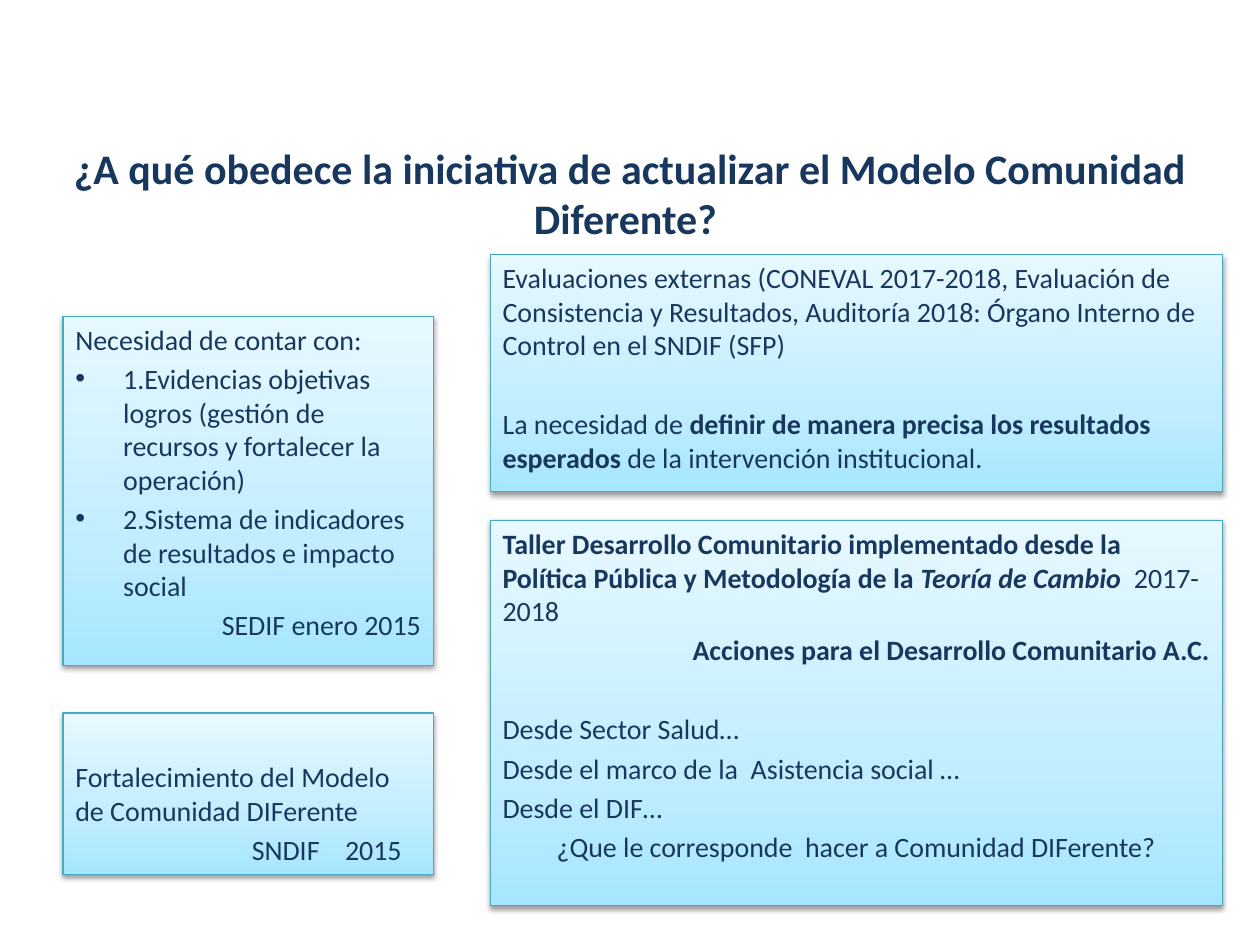
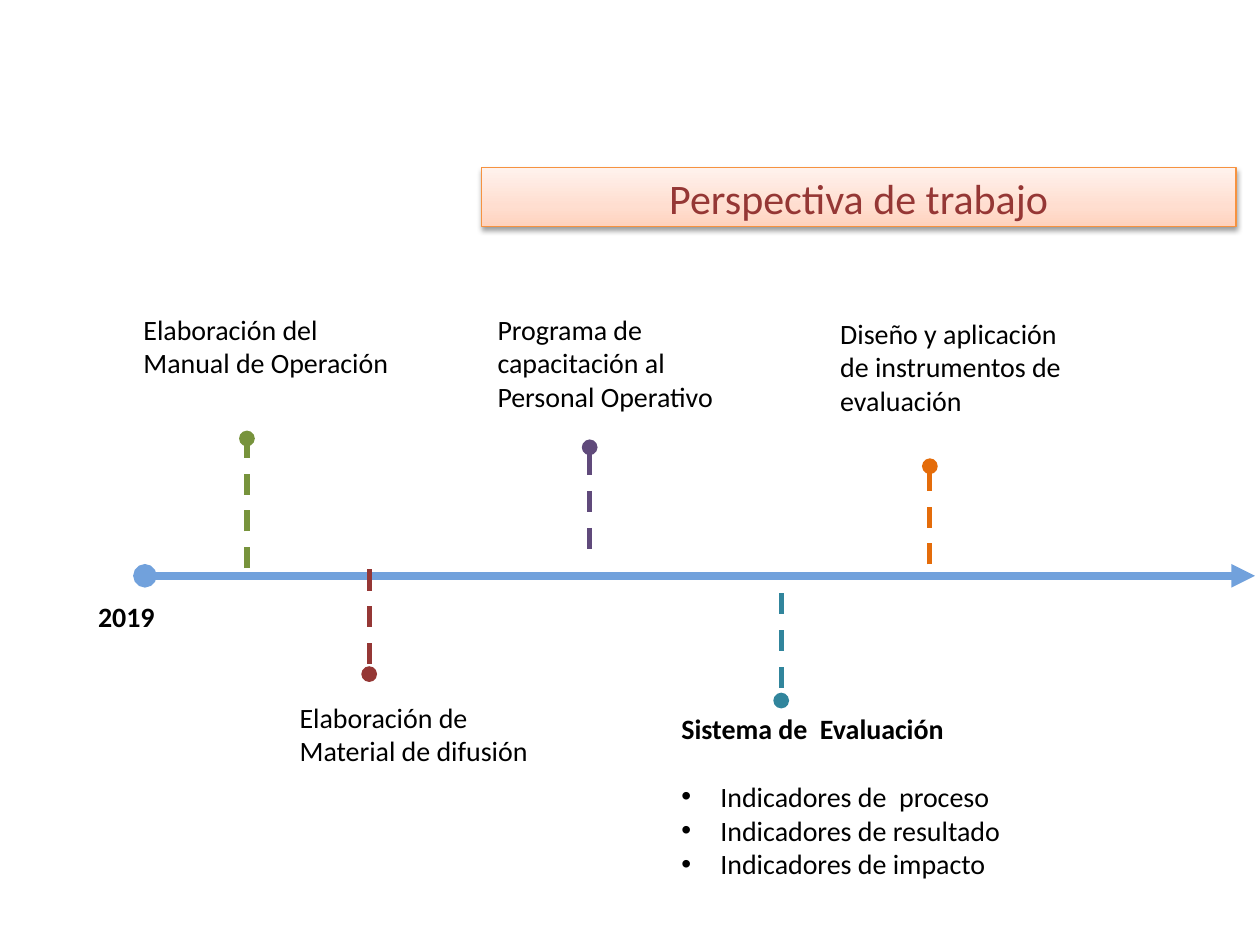
from dataclasses import dataclass

from lxml.etree import SubElement
from pptx import Presentation
from pptx.dml.color import RGBColor
from pptx.enum.dml import MSO_LINE
from pptx.enum.shapes import MSO_CONNECTOR, MSO_SHAPE
from pptx.enum.text import MSO_ANCHOR, MSO_AUTO_SIZE, PP_ALIGN
from pptx.oxml.ns import qn
from pptx.util import Inches, Pt

FONT = "Calibri"
BODY_SIZE, TITLE_SIZE = 16, 24
SLIDE_WIDTH, SLIDE_HEIGHT = Inches(10), Inches(7.5)
COLUMNS, ROWS = 100, 75
ITEM_SPACE, PANEL_BREAK, LABEL_BREAK = 3.2, 26, 19.5
TITLE_ONLY_LAYOUT = 5

BLACK = RGBColor(0x00, 0x00, 0x00)
NAVY = RGBColor(0x17, 0x37, 0x5E)
RED = RGBColor(0x95, 0x37, 0x35)
GREEN = RGBColor(0x77, 0x93, 0x3C)
PURPLE = RGBColor(0x60, 0x4A, 0x7B)
TEAL = RGBColor(0x31, 0x85, 0x9C)
ORANGE = RGBColor(0xE4, 0x6C, 0x0A)
AXIS_BLUE = RGBColor(0x71, 0xA1, 0xDC)
AQUA_BORDER = RGBColor(0x46, 0xAA, 0xC5)
AQUA_STOPS = (RGBColor(0xA7, 0xE6, 0xFF), RGBColor(0xC1, 0xED, 0xFF), RGBColor(0xE7, 0xF8, 0xFF))
PEACH_BORDER = RGBColor(0xF6, 0x92, 0x40)
PEACH_STOPS = (RGBColor(0xFF, 0xD2, 0xBD), RGBColor(0xFF, 0xDE, 0xD0), RGBColor(0xFF, 0xF2, 0xED))
STOP_POSITIONS = (0, 35000, 100000)


@dataclass(frozen=True)
class Area:
    """A rectangle in grid columns and rows."""
    column: float
    row: float
    columns: float
    rows: float


@dataclass(frozen=True)
class Span:
    """A stretch of text with its own emphasis."""
    text: str
    bold: bool = False
    italic: bool = False


@dataclass(frozen=True)
class Line:
    """One paragraph with its layout."""
    spans: tuple[Span, ...]
    align: PP_ALIGN = PP_ALIGN.LEFT
    space: float = 0
    bullet_indent: float = 0
    tabs: tuple[float, ...] = ()


@dataclass(frozen=True)
class Panel:
    """A shaded box of text."""
    area: Area
    lines: tuple[Line, ...]
    top_inset: float = 0.05


@dataclass(frozen=True)
class Label:
    """A plain text beside the timeline."""
    area: Area
    lines: tuple[Line, ...]


@dataclass(frozen=True)
class Pin:
    """A dashed marker that runs from one row to another."""
    colour: RGBColor
    column: float
    start_row: float
    end_row: float
    head: str = "none"
    tail: str = "oval"


def plain(text: str, bold: bool = False, **layout) -> Line:
    """Return a paragraph with a single span."""
    return Line((Span(text, bold),), **layout)


def item(text: str, **layout) -> Line:
    """Return a panel paragraph set apart from the one above."""
    return plain(text, **{"space": ITEM_SPACE, **layout})


PANELS = (
    Panel(Area(5, 25.1, 29.4, 27.7), (
        plain("Necesidad de contar con:"),
        item("1.Evidencias objetivas logros (gestión de recursos y fortalecer la operación)", bullet_indent=0.38),
        item("2.Sistema de indicadores de resultados e impacto social", bullet_indent=0.38),
        item("SEDIF enero 2015", align=PP_ALIGN.RIGHT),
    )),
    Panel(Area(5, 56.6, 29.4, 12.8), (
        plain("Fortalecimiento del Modelo de Comunidad DIFerente"),
        item("\tSNDIF\t2015", tabs=(1.4, 2.14)),
    ), top_inset=0.37),
    Panel(Area(38.9, 20.2, 58.1, 18.8), (
        plain("Evaluaciones externas (CONEVAL 2017-2018, Evaluación de Consistencia y Resultados, "
              "Auditoría 2018: Órgano Interno de Control en el SNDIF (SFP)"),
        Line((Span("La necesidad de "),
              Span("definir de manera precisa los resultados esperados ", bold=True),
              Span("de la intervención institucional.")), space=PANEL_BREAK),
    )),
    Panel(Area(38.9, 41.3, 58.1, 30.6), (
        Line((Span("Taller Desarrollo Comunitario implementado desde la Política Pública "
                   "y Metodología de la ", bold=True),
              Span("Teoría de Cambio  ", bold=True, italic=True),
              Span("2017-2018"))),
        item("Acciones para el Desarrollo Comunitario A.C.", bold=True, align=PP_ALIGN.RIGHT),
        item("Desde Sector Salud…", space=PANEL_BREAK),
        item("Desde el marco de la  Asistencia social …"),
        item("Desde el DIF…"),
        item("¿Que le corresponde  hacer a Comunidad DIFerente?", align=PP_ALIGN.CENTER),
    )),
)

LABELS = (
    Label(Area(6.8, 47.1, 7.9, 3.7), (plain("2019", bold=True),)),
    Label(Area(10.4, 24.3, 21.9, 6.4), (plain("Elaboración del Manual de Operación"),)),
    Label(Area(22.8, 55.1, 21.2, 6.4), (plain("Elaboración de Material de difusión"),)),
    Label(Area(38.5, 24.3, 20.1, 9.1), (plain("Programa de capacitación al Personal Operativo"),)),
    Label(Area(65.7, 24.6, 21.1, 9.1), (plain("Diseño y aplicación de instrumentos de evaluación"),)),
    Label(Area(53.1, 56, 33.7, 14.5), (
        plain("Sistema de  Evaluación", bold=True),
        plain("Indicadores de  proceso", space=LABEL_BREAK, bullet_indent=0.31),
        plain("Indicadores de resultado", bullet_indent=0.31),
        plain("Indicadores de impacto", bullet_indent=0.31),
    )),
)

PINS = (
    Pin(GREEN, 19.6, 45.1, 34.8),
    Pin(PURPLE, 46.8, 35.5, 44.6, head="oval", tail="none"),
    Pin(TEAL, 62, 47.1, 55.6),
    Pin(RED, 29.3, 45.2, 53.5),
    Pin(ORANGE, 73.8, 44.8, 37),
)


def across(columns: float) -> int:
    """Convert grid columns to a length."""
    return round(SLIDE_WIDTH * columns / COLUMNS)


def down(rows: float) -> int:
    """Convert grid rows to a length."""
    return round(SLIDE_HEIGHT * rows / ROWS)


def bounds(area: Area) -> tuple[int, int, int, int]:
    """Return left, top, width and height of an area."""
    return across(area.column), down(area.row), across(area.columns), down(area.rows)


def add_marks(paragraph, line: Line) -> None:
    """Give a paragraph its bullet and tab stops."""
    properties = paragraph._p.get_or_add_pPr()
    if line.bullet_indent:
        indent = Inches(line.bullet_indent)
        properties.set("marL", str(indent))
        properties.set("indent", str(-indent))
        SubElement(properties, qn("a:buFont"), typeface="Arial")
        SubElement(properties, qn("a:buChar"), char="•")
    if line.tabs:
        tab_list = SubElement(properties, qn("a:tabLst"))
        for position in line.tabs:
            SubElement(tab_list, qn("a:tab"), pos=str(Inches(position)), algn="l")


def style_font(font, size: float, colour: RGBColor, bold: bool = False, italic: bool = False) -> None:
    """Set every property of a font."""
    font.name, font.size, font.bold, font.italic = FONT, Pt(size), bold, italic
    font.color.rgb = colour


def write_lines(text_frame, lines: tuple[Line, ...], colour: RGBColor) -> None:
    """Fill a text frame with formatted paragraphs."""
    text_frame.word_wrap = True
    text_frame.vertical_anchor = MSO_ANCHOR.TOP
    for index, line in enumerate(lines):
        paragraph = text_frame.add_paragraph() if index else text_frame.paragraphs[0]
        add_marks(paragraph, line)
        paragraph.alignment = line.align
        paragraph.space_before = Pt(line.space)
        for span in line.spans:
            run = paragraph.add_run()
            run.text = span.text
            style_font(run.font, BODY_SIZE, colour, span.bold, span.italic)


def shade(shape, stops: tuple[RGBColor, ...], border: RGBColor) -> None:
    """Give a shape a rising gradient, a thin border and a soft shadow."""
    shape.fill.gradient()
    shape.fill.gradient_angle = 90
    properties = shape._element.spPr
    stop_list = properties.find(qn("a:gradFill")).find(qn("a:gsLst"))
    for old_stop in list(stop_list):
        stop_list.remove(old_stop)
    for position, colour in zip(STOP_POSITIONS, stops):
        stop = SubElement(stop_list, qn("a:gs"), pos=str(position))
        SubElement(stop, qn("a:srgbClr"), val=str(colour))
    shape.line.color.rgb = border
    shape.line.width = Pt(0.75)
    shape.shadow.inherit = False
    shadow = SubElement(properties.find(qn("a:effectLst")), qn("a:outerShdw"), blurRad=str(Pt(3.1)),
                        dist=str(Pt(1.6)), dir="5400000", rotWithShape="0")
    shadow_colour = SubElement(shadow, qn("a:srgbClr"), val=str(BLACK))
    SubElement(shadow_colour, qn("a:alpha"), val="38000")


def add_titled_slide(presentation, text: str, area: Area, colour: RGBColor, bold: bool = False):
    """Add a slide and place its title."""
    slide = presentation.slides.add_slide(presentation.slide_layouts[TITLE_ONLY_LAYOUT])
    title = slide.shapes.title
    title.left, title.top, title.width, title.height = bounds(area)
    text_frame = title.text_frame
    text_frame.text = text
    text_frame.word_wrap = True
    text_frame.vertical_anchor = MSO_ANCHOR.MIDDLE
    text_frame.margin_left = text_frame.margin_right = Inches(0.07)
    text_frame.margin_top = text_frame.margin_bottom = Inches(0.04)
    paragraph = text_frame.paragraphs[0]
    paragraph.alignment = PP_ALIGN.CENTER
    style_font(paragraph.runs[0].font, TITLE_SIZE, colour, bold)
    return slide


def add_panel(slide, panel: Panel) -> None:
    """Draw a shaded box with its text."""
    shape = slide.shapes.add_shape(MSO_SHAPE.RECTANGLE, *bounds(panel.area))
    shade(shape, AQUA_STOPS, AQUA_BORDER)
    shape.text_frame.margin_top = Inches(panel.top_inset)
    write_lines(shape.text_frame, panel.lines, NAVY)


def add_label(slide, label: Label) -> None:
    """Draw a plain text box."""
    text_frame = slide.shapes.add_textbox(*bounds(label.area)).text_frame
    write_lines(text_frame, label.lines, BLACK)
    text_frame.auto_size = MSO_AUTO_SIZE.SHAPE_TO_FIT_TEXT


def add_line(slide, start: tuple[float, float], end: tuple[float, float], colour: RGBColor,
             width: float, head: str, tail: str, dashed: bool = False) -> None:
    """Draw a straight line between two grid points."""
    connector = slide.shapes.add_connector(
        MSO_CONNECTOR.STRAIGHT, across(start[0]), down(start[1]), across(end[0]), down(end[1]))
    connector.line.color.rgb = colour
    connector.line.width = Pt(width)
    if dashed:
        connector.line.dash_style = MSO_LINE.DASH
    properties = connector._element.spPr
    outline = properties.find(qn("a:ln"))
    SubElement(outline, qn("a:headEnd"), type=head)
    SubElement(outline, qn("a:tailEnd"), type=tail)
    SubElement(properties, qn("a:effectLst"))


def build_reasons(presentation) -> None:
    """Build the slide on why the model is updated."""
    slide = add_titled_slide(
        presentation, "¿A qué obedece la iniciativa de actualizar el Modelo Comunidad Diferente? ",
        Area(5, 10.3, 90, 10), NAVY, bold=True)
    for panel in PANELS:
        add_panel(slide, panel)


def build_timeline(presentation) -> None:
    """Build the slide with the work timeline."""
    slide = add_titled_slide(presentation, "Perspectiva de trabajo", Area(38.2, 13.3, 59.9, 4.7), RED)
    shade(slide.shapes.title, PEACH_STOPS, PEACH_BORDER)
    add_line(slide, (11.5, 45.7), (99.6, 45.7), AXIS_BLUE, 4.5, "oval", "triangle")
    for pin in PINS:
        add_line(slide, (pin.column, pin.start_row), (pin.column, pin.end_row),
                 pin.colour, 3, pin.head, pin.tail, dashed=True)
    for label in LABELS:
        add_label(slide, label)


def main() -> None:
    """Build and save the presentation."""
    presentation = Presentation()
    presentation.slide_width, presentation.slide_height = SLIDE_WIDTH, SLIDE_HEIGHT
    build_reasons(presentation)
    build_timeline(presentation)
    presentation.save("out.pptx")


if __name__ == "__main__":
    main()
